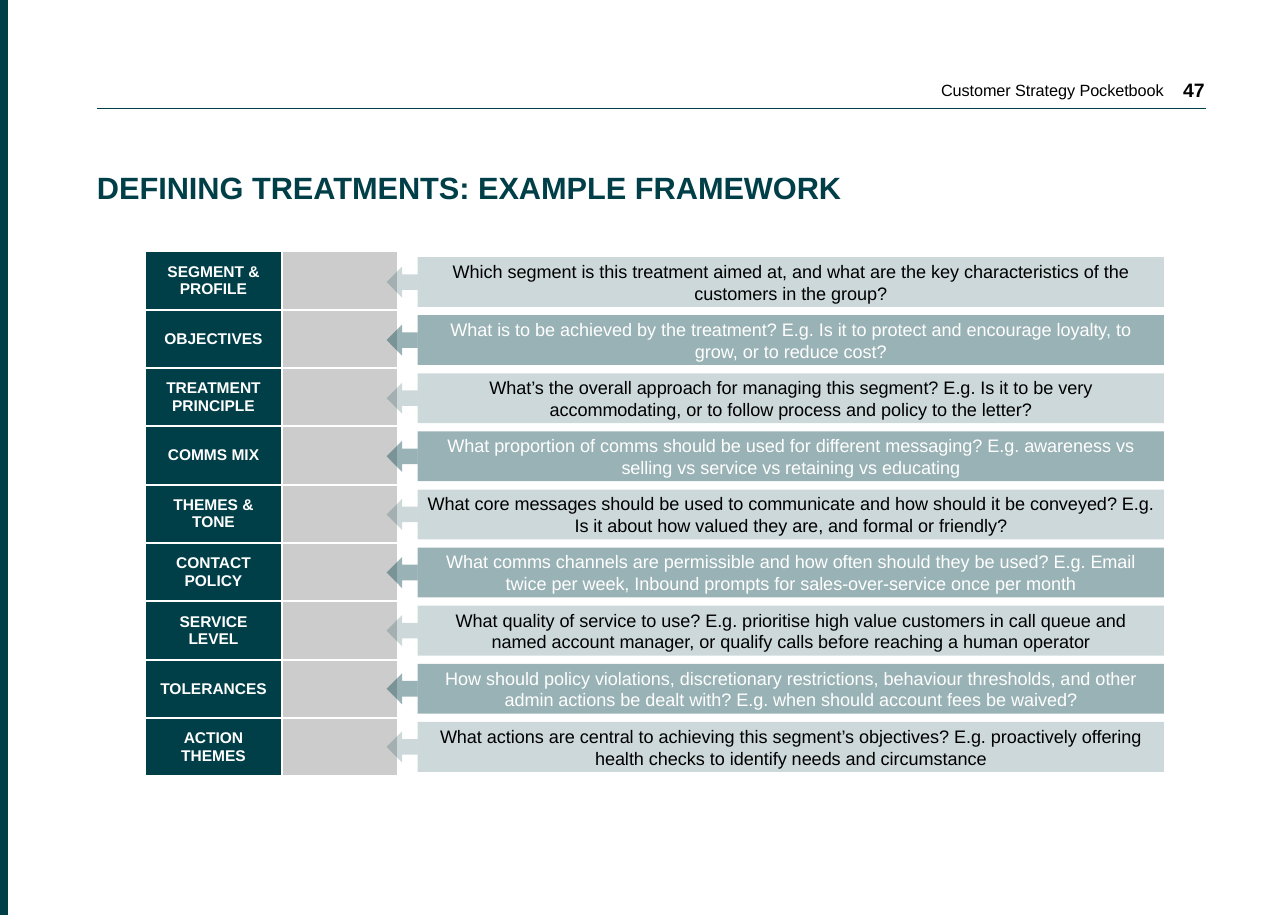
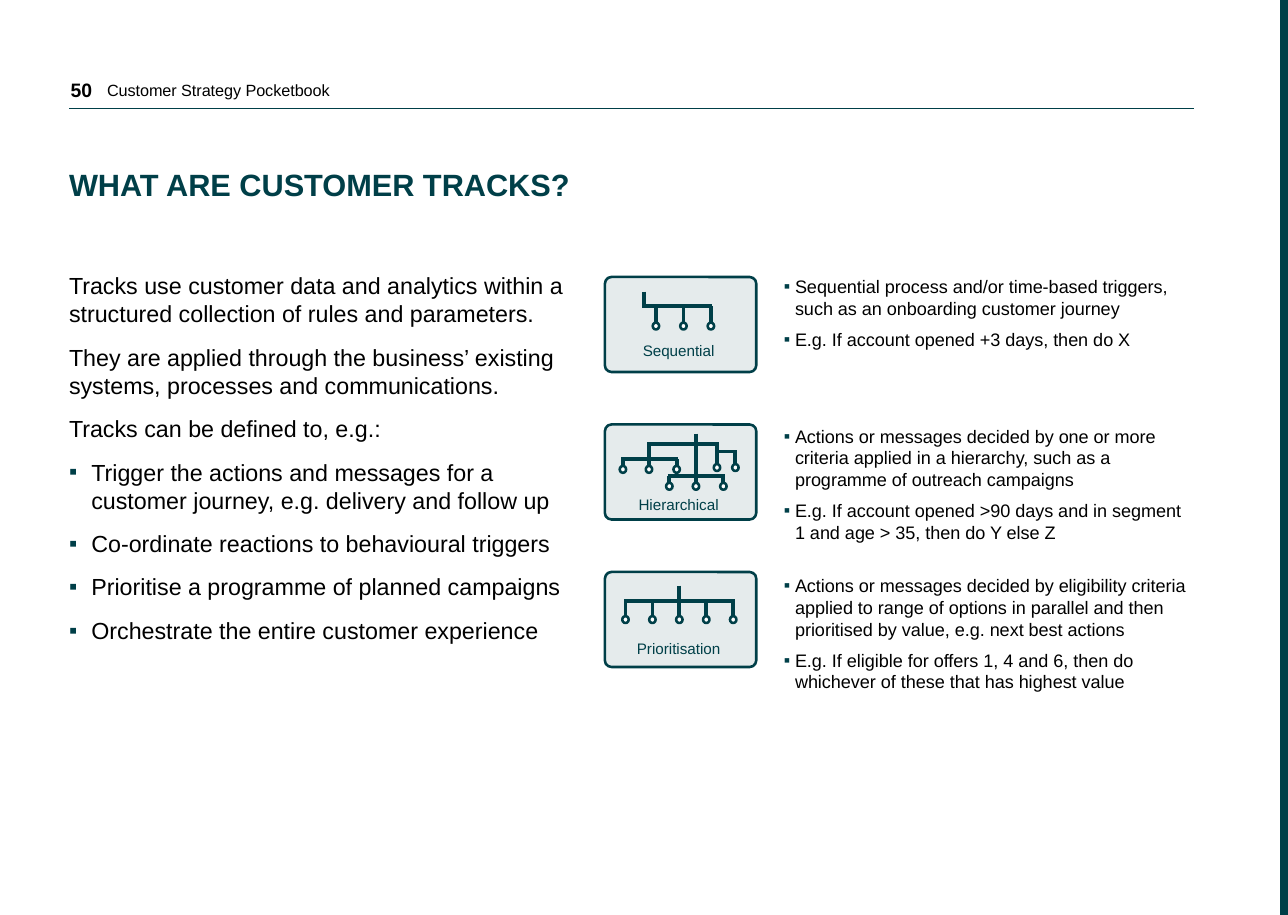
"""Build two pocketbook pages: a treatment framework and an overview of customer tracks."""
from lxml.etree import SubElement
from pptx import Presentation
from pptx.dml.color import RGBColor
from pptx.enum.shapes import MSO_CONNECTOR, MSO_SHAPE
from pptx.enum.text import MSO_ANCHOR, MSO_AUTO_SIZE, PP_ALIGN
from pptx.oxml.ns import qn
from pptx.util import Cm, Inches, Pt

COLOURS = {"teal": "003F48", "grey": "CCCCCC", "white": "FFFFFF", "black": "000000"}

deck = Presentation()
deck.slide_width, deck.slide_height = Cm(17.6), Cm(12.5)
COLUMN, ROW = deck.slide_width / 100, deck.slide_height / 100

MIDDLE = {"vertical_anchor": MSO_ANCHOR.MIDDLE, "word_wrap": True}
BODY = {"margin_left": 0, "margin_right": 0, "word_wrap": True}
TIGHT = {
    "margin_left": Inches(0.06), "margin_right": Inches(0.06),
    "margin_top": Inches(0.03), "margin_bottom": Inches(0.03),
    "vertical_anchor": MSO_ANCHOR.MIDDLE,
}
TITLE = {**TIGHT, "margin_left": 0, "word_wrap": True, "auto_size": MSO_AUTO_SIZE.NONE}
BAR = {**MIDDLE, **{f"margin_{side}": Inches(0.05) for side in ("left", "right", "top", "bottom")}}
CENTRED = {"alignment": PP_ALIGN.CENTER}


def add(page, kind, left, top, width, height, fill=None, alpha=100, line=None, weight=1):
    """Add a text box, a line or a preset shape, measured in columns and rows."""
    area = [round(left * COLUMN), round(top * ROW), round(width * COLUMN), round(height * ROW)]
    if kind == "text":
        return page.shapes.add_textbox(*area)
    if kind == "line":
        item = page.shapes.add_connector(
            MSO_CONNECTOR.STRAIGHT, area[0], area[1], area[0] + area[2], area[1] + area[3])
    else:
        item = page.shapes.add_shape(kind, *area)
        item.shadow.inherit = False
        item.fill.solid()
        item.fill.fore_color.rgb = RGBColor.from_string(COLOURS[fill])
        if alpha < 100:
            paint = item._element.spPr.find(".//" + qn("a:srgbClr"))
            SubElement(paint, qn("a:alpha"), val=str(alpha * 1000))
    if line:
        item.line.color.rgb = RGBColor.from_string(COLOURS[line])
        item.line.width = Pt(weight)
    else:
        item.line.fill.background()
    if kind == "line":
        SubElement(item._element.spPr, qn("a:effectLst"))
    return item


def write(frame, lines, size, colour, frame_format, para_format, bold=False, indent=0, plain=0):
    """Fill a text frame; with an indent, lines after the first plain ones get bullets."""
    for name, value in frame_format.items():
        setattr(frame, name, value)
    for number, line in enumerate(lines):
        para = frame.add_paragraph() if number else frame.paragraphs[0]
        if indent and number >= plain:
            properties = para._p.get_or_add_pPr()
            properties.set("marL", str(Inches(indent)))
            properties.set("indent", str(-Inches(indent)))
            bullet_colour = SubElement(properties, qn("a:buClr"))
            SubElement(bullet_colour, qn("a:srgbClr"), val=COLOURS["teal"])
            SubElement(properties, qn("a:buFont"), typeface="Arial")
            SubElement(properties, qn("a:buChar"), char="▪")
        for name, value in para_format.items():
            setattr(para, name, value)
        span = para.add_run()
        span.text = line
        for name, value in {"name": "Arial", "size": Pt(size), "bold": bold}.items():
            setattr(span.font, name, value)
        span.font.color.rgb = RGBColor.from_string(COLOURS[colour])


PAGES = [
    {"title": "DEFINING TREATMENTS: EXAMPLE FRAMEWORK", "number": "47", "side": PP_ALIGN.RIGHT,
     "left": 7.53, "right": 93.65, "title_top": 17.7, "head": 52.4, "folio": 89.65, "band": 0},
    {"title": "WHAT ARE CUSTOMER TRACKS?", "number": "50", "side": PP_ALIGN.LEFT,
     "left": 5.36, "right": 92.7, "title_top": 17.35, "head": 6.9, "folio": 4.62, "band": 99.38},
]
for look in PAGES:
    page = deck.slides.add_slide(deck.slide_layouts[5])
    title = page.shapes.title
    title.left, title.top = round(look["left"] * COLUMN), round(look["title_top"] * ROW)
    title.width, title.height = round(70 * COLUMN), round(6.1 * ROW)
    write(title.text_frame, [look["title"]], 11.9, "teal", TITLE,
          {"alignment": PP_ALIGN.LEFT, "line_spacing": 0.9}, bold=True)
    head = add(page, "text", look["head"], 7.7, 39.4, 4.27)
    write(head.text_frame, ["Customer Strategy Pocketbook"], 6.3, "black", MIDDLE,
          {"alignment": look["side"]})
    folio = add(page, "text", look["folio"], 7.4, 4.76, 4.9)
    write(folio.text_frame, [look["number"]], 7.5, "black", TIGHT,
          {"alignment": look["side"]}, bold=True)
    add(page, "line", look["left"], 11.86, look["right"] - look["left"], 0, line="teal", weight=0.5)
    add(page, MSO_SHAPE.RECTANGLE, look["band"], 0, 0.62, 100, "teal")
framework, tracks = deck.slides

TREATMENTS = [
    ("SEGMENT & PROFILE", "Which segment is this treatment aimed at, and what are the key "
     "characteristics of the customers in the group?"),
    ("OBJECTIVES", "What is to be achieved by the treatment? E.g. Is it to protect and "
     "encourage loyalty, to grow, or to reduce cost?"),
    ("TREATMENT PRINCIPLE", "What’s the overall approach for managing this segment? E.g. Is it "
     "to be very accommodating, or to follow process and policy to the letter?"),
    ("COMMS MIX", "What proportion of comms should be used for different messaging? E.g. "
     "awareness vs selling vs service vs retaining vs educating"),
    ("THEMES & TONE", "What core messages should be used to communicate and how should it be "
     "conveyed? E.g. Is it about how valued they are, and formal or friendly?"),
    ("CONTACT POLICY", "What comms channels are permissible and how often should they be used? "
     "E.g. Email twice per week, Inbound prompts for sales-over-service once per month"),
    ("SERVICE LEVEL", "What quality of service to use? E.g. prioritise high value customers in "
     "call queue and named account manager, or qualify calls before reaching a human operator"),
    ("TOLERANCES", "How should policy violations, discretionary restrictions, behaviour "
     "thresholds, and other admin actions be dealt with? E.g. when should account fees be waived?"),
    ("ACTION THEMES", "What actions are central to achieving this segment’s objectives? E.g. "
     "proactively offering health checks to identify needs and circumstance"),
]
ROW_HEIGHT, BAR_HEIGHT, ARROW_HEIGHT = 6.38, 5.45, 3.4
table = framework.shapes.add_table(
    len(TREATMENTS), 2, round(11.27 * COLUMN), round(27.46 * ROW), round(19.67 * COLUMN),
    round(len(TREATMENTS) * ROW_HEIGHT * ROW)).table
table.first_row = table.horz_banding = False
for column, width in zip(table.columns, (10.6, 9.07)):
    column.width = round(width * COLUMN)
for index, (name, question) in enumerate(TREATMENTS):
    table.rows[index].height = round(ROW_HEIGHT * ROW)
    for cell, fill in zip(table.rows[index].cells, ("teal", "grey")):
        for key, value in TIGHT.items():
            setattr(cell, key, value)
        properties = cell._tc.get_or_add_tcPr()
        for edge in ("a:lnL", "a:lnR", "a:lnT", "a:lnB"):
            border = SubElement(properties, qn(edge), w=str(Pt(1)))
            SubElement(SubElement(border, qn("a:solidFill")), qn("a:srgbClr"), val=COLOURS["white"])
        cell.fill.solid()
        cell.fill.fore_color.rgb = RGBColor.from_string(COLOURS[fill])
    label, blank = table.rows[index].cells
    write(label.text_frame, [name], 6, "white", {}, CENTRED, bold=True)
    blank.text_frame.paragraphs[0]._p.get_or_add_endParaRPr().set("sz", "600")
    top = 28.1 + index * 6.35
    alpha, colour = ((20, "black"), (40, "white"))[index % 2]
    bar = add(framework, MSO_SHAPE.RECTANGLE, 32.42, top, 57.95, BAR_HEIGHT, "teal", alpha)
    write(bar.text_frame, [question], 7, colour, BAR, CENTRED)
    add(framework, MSO_SHAPE.LEFT_ARROW, 30.02, top + (BAR_HEIGHT - ARROW_HEIGHT) / 2,
        2.4, ARROW_HEIGHT, "teal", alpha)

intro = add(tracks, "text", 5.36, 28.66, 38.8, 50.2)
write(intro.text_frame, [
    "Tracks use customer data and analytics within a structured collection of rules and parameters.",
    "They are applied through the business’ existing systems, processes and communications.",
    "Tracks can be defined to, e.g.:",
    "Trigger the actions and messages for a customer journey, e.g. delivery and follow up",
    "Co-ordinate reactions to behavioural triggers",
    "Prioritise a programme of planned campaigns",
    "Orchestrate the entire customer experience",
], 9, "black", BODY, {"space_after": Pt(6)}, indent=0.12, plain=3)

TRACKS = [
    {"name": "Sequential", "label_top": 6.05, "stem": (3.03, 1.6, 3.2),
     "rails": [(3.2, 5.36, 3.03, [3.96, 6.1, 8.23])],
     "notes": ["Sequential process and/or time-based triggers, such as an onboarding customer journey",
               "E.g. If account opened +3 days, then do X"]},
    {"name": "Hierarchical", "label_top": 6.75, "stem": (7.07, 1, 6.75),
     "rails": [(2.1, 4.9, 3.42, [3.42]), (2.1, 4.7, 3.42, [8.7]), (3.8, 4.9, 1.4, [1.4, 5.57]),
               (2.95, 4.7, 8.7, [10.13]), (5.6, 6.75, 5, [5, 7.07, 9.2])],
     "notes": ["Actions or messages decided by one or more criteria applied in a hierarchy, "
               "such as a programme of outreach campaigns",
               "E.g. If account opened >90 days and in segment 1 and age > 35, then do Y else Z"]},
    {"name": "Prioritisation", "label_top": 6.3, "stem": (5.78, 1.5, 3.2),
     "rails": [(3.2, 5.2, 1.6, [1.6 + 2.09 * step for step in range(5)])],
     "notes": ["Actions or messages decided by eligibility criteria applied to range of options "
               "in parallel and then prioritised by value, e.g. next best actions",
               "E.g. If eligible for offers 1, 4 and 6, then do whichever of these that has "
               "highest value"]},
]
CARD_LEFT, CARD_WIDTH, DOT_WIDTH, DOT_HEIGHT, OVERHANG = 46.97, 11.75, 0.5, 0.75, 0.12
for index, track in enumerate(TRACKS):
    top = 30.28 + index * 16.12
    card = add(tracks, MSO_SHAPE.ROUNDED_RECTANGLE, CARD_LEFT, top, CARD_WIDTH, 10.38,
               "teal", 10, "teal")
    card.adjustments[0] = 0.07
    stem, start, end = track["stem"]
    strokes, dots = [(stem, start, 0, end - start)], []
    for level, dot_level, left, drops in track["rails"]:
        strokes.append((left - OVERHANG, level, drops[-1] - left + 2 * OVERHANG, 0))
        strokes += [(drop, level, 0, dot_level - level) for drop in drops]
        dots += [(drop - DOT_WIDTH / 2, dot_level - DOT_HEIGHT / 2) for drop in drops]
    for left, level, width, height in strokes:
        add(tracks, "line", CARD_LEFT + left, top + level, width, height, line="teal", weight=1.5)
    for left, level in dots:
        add(tracks, MSO_SHAPE.OVAL, CARD_LEFT + left, top + level, DOT_WIDTH, DOT_HEIGHT,
            "white", line="teal")
    label = add(tracks, "text", CARD_LEFT - 0.15, top + track["label_top"], CARD_WIDTH, 4.07)
    write(label.text_frame, [track["name"]], 5.9, "teal", {"word_wrap": True}, CENTRED)
    notes = add(tracks, "text", 60.87, 29.1 + index * 16.36, 31.9, 10.8)
    write(notes.text_frame, track["notes"], 7, "black", BODY, {"space_after": Pt(3.6)}, indent=0.06)

deck.save("out.pptx")
